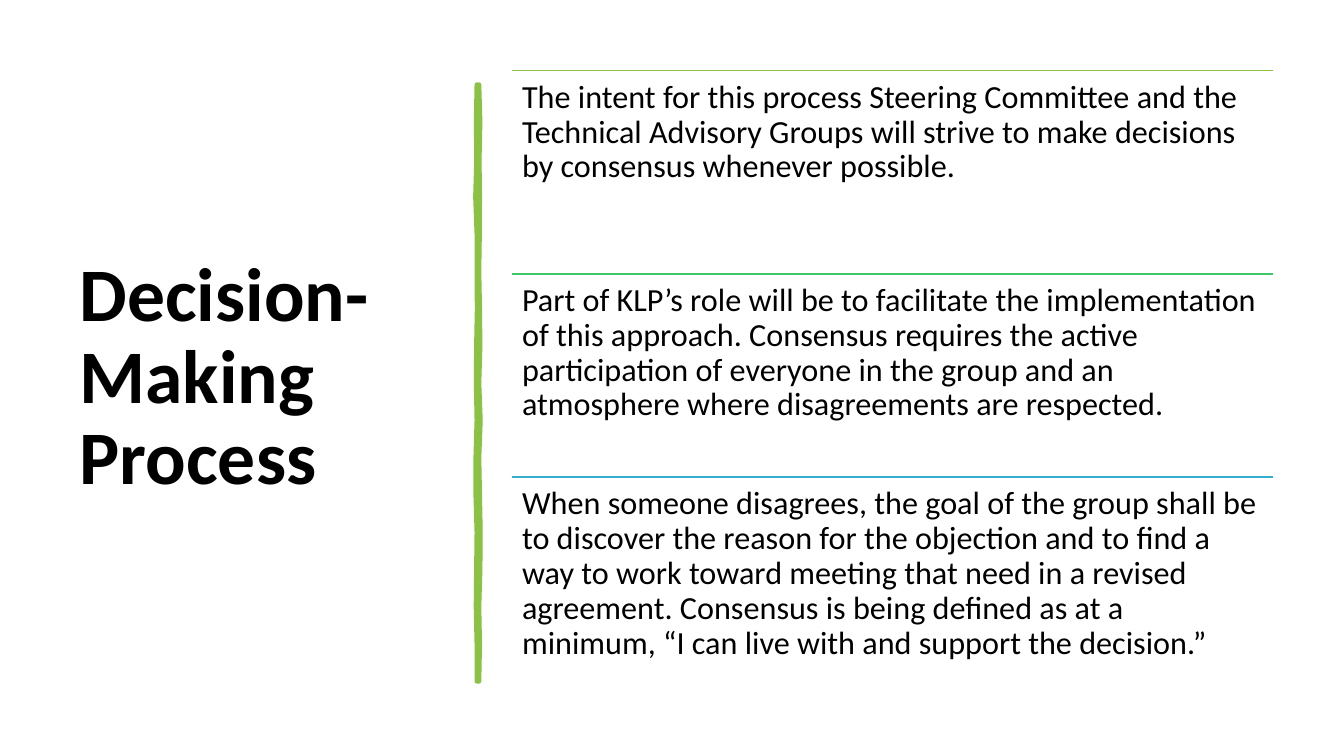
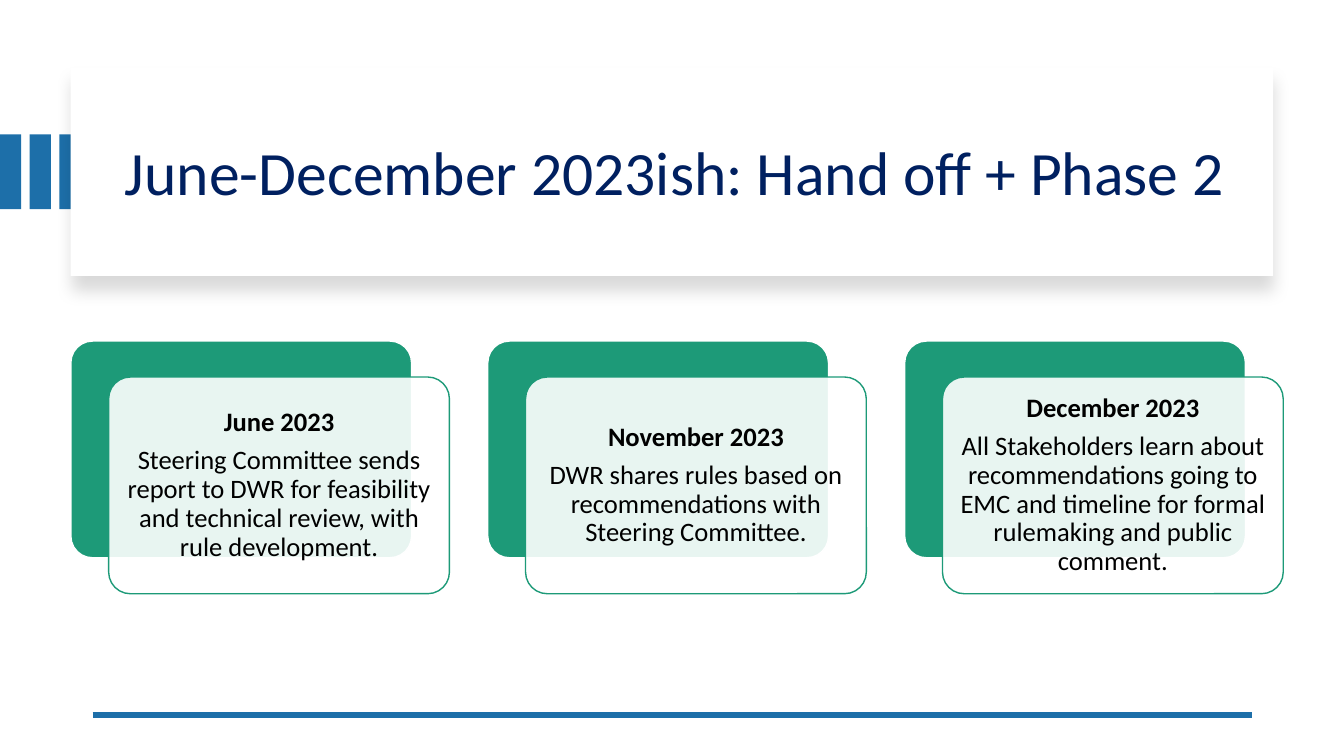
"""Build two slides: a decision-making process and a dated hand-off plan."""
from dataclasses import dataclass

from lxml import etree
from pptx import Presentation
from pptx.dml.color import RGBColor
from pptx.enum.shapes import MSO_CONNECTOR, MSO_SHAPE
from pptx.enum.text import MSO_ANCHOR, MSO_AUTO_SIZE, PP_ALIGN
from pptx.oxml.ns import qn
from pptx.util import Pt

RECT, ROUNDED = MSO_SHAPE.RECTANGLE, MSO_SHAPE.ROUNDED_RECTANGLE
STRAIGHT = MSO_CONNECTOR.STRAIGHT
TOP, MIDDLE = MSO_ANCHOR.TOP, MSO_ANCHOR.MIDDLE
LEFT, CENTER = PP_ALIGN.LEFT, PP_ALIGN.CENTER
TITLE_ONLY = 5

PROCESS_TITLE = "Decision-Making Process"
PRINCIPLES = [
    ("8BC145", "The intent for this process Steering Committee and the Technical "
               "Advisory Groups will strive to make decisions by consensus "
               "whenever possible."),
    ("3EC76A", "Part of KLP’s role will be to facilitate the implementation of "
               "this approach. Consensus requires the active participation of "
               "everyone in the group and an atmosphere where disagreements "
               "are respected."),
    ("36AFCE", "When someone disagrees, the goal of the group shall be to "
               "discover the reason for the objection and to find a way to work "
               "toward meeting that need in a revised agreement. Consensus is "
               "being defined as at a minimum, “I can live with and support "
               "the decision.”"),
]
PLAN_TITLE = "June-December 2023ish: Hand off + Phase 2"
MILESTONES = [
    ("June 2023", "Steering Committee sends report to DWR for feasibility and "
                  "technical review, with rule development."),
    ("November 2023", "DWR shares rules based on recommendations with Steering "
                      "Committee."),
    ("December 2023", "All Stakeholders learn about recommendations going to EMC "
                      "and timeline for formal rulemaking and public comment."),
]
STROKE_LEFT = [0, -0.5, -0.2, -1, 0, 0, 0.2, -0.3, -0.5, 0, -0.8, -0.8, 0, -0.3, -0.6, 0, 0]
STROKE_RIGHT = [0, 0.8, 0.2, 0.5, 0.4, 0, 0.5, 0.8, 0, 1, 0, 0.5, 1, 0.8, 0, 0.5, 0]


@dataclass(frozen=True)
class Theme:
    """Colours, font and type sizes."""
    font: str = "Calibri"
    black: str = "000000"
    white: str = "FFFFFF"
    navy: str = "002060"
    blue: str = "1D6FA9"
    green: str = "8BC145"
    teal: str = "1D9A78"
    process_title: float = 54
    plan_title: float = 44
    body: float = 23
    card: float = 19


THEME = Theme()


def rgb(color):
    """Turn a hex string into a colour."""
    return RGBColor.from_string(color)


def add_child(parent, tag, **attrs):
    """Append a DrawingML element."""
    return etree.SubElement(parent, qn(tag), {k: str(v) for k, v in attrs.items()})


def write_text(sp, *lines, size, color=THEME.black, bold_first=False, align=LEFT,
               anchor=TOP, inset=(7.2, 7.2), after=0):
    """Fill a shape with formatted paragraphs."""
    tf = sp.text_frame
    tf.word_wrap, tf.auto_size, tf.vertical_anchor = True, MSO_AUTO_SIZE.NONE, anchor
    tf.margin_left = tf.margin_right = Pt(inset[0])
    tf.margin_top = tf.margin_bottom = Pt(inset[1])
    for i, line in enumerate(lines):
        p = tf.paragraphs[0] if i == 0 else tf.add_paragraph()
        p.alignment, p.line_spacing = align, 0.9
        p.space_before, p.space_after = Pt(0), Pt(after)
        r = p.add_run()
        r.text = line
        r.font.name, r.font.size = THEME.font, Pt(size)
        r.font.bold = bold_first and i == 0
        r.font.color.rgb = rgb(color)


def set_title(s, text, box, **fmt):
    """Place the title placeholder on top and write it."""
    sp = s.shapes.title
    sp.left, sp.top, sp.width, sp.height = map(Pt, box)
    s.shapes._spTree.append(sp._element)
    write_text(sp, text, anchor=MIDDLE, inset=(7.2, 3.6), **fmt)


def paint(sp, fill, line=None, width=1):
    """Set a plain fill and outline without a shadow."""
    sp.shadow.inherit = False
    sp.fill.solid()
    sp.fill.fore_color.rgb = rgb(fill)
    if line:
        sp.line.color.rgb = rgb(line)
        sp.line.width = Pt(width)
    else:
        sp.line.fill.background()


def add_box(s, kind, box, fill, line=None):
    """Add a painted preset shape."""
    sp = s.shapes.add_shape(kind, *map(Pt, box))
    paint(sp, fill, line)
    if kind == ROUNDED:
        sp.adjustments[0] = 0.1
    return sp


def add_rule(s, left, right, y, color, width):
    """Add a horizontal line."""
    c = s.shapes.add_connector(STRAIGHT, Pt(left), Pt(y), Pt(right), Pt(y))
    c.line.color.rgb = rgb(color)
    c.line.width = Pt(width)
    add_child(c._element.spPr, "a:effectLst")


def add_brush_stroke(s, left, right, top, bottom):
    """Draw the uneven vertical divider."""
    step = (bottom - top) / (len(STROKE_LEFT) - 1)
    down = [(right + dx, top + i * step) for i, dx in enumerate(STROKE_RIGHT)]
    up = [(left + dx, top + i * step) for i, dx in enumerate(STROKE_LEFT)][::-1]
    points = [(Pt(x), Pt(y)) for x, y in down + up]
    fb = s.shapes.build_freeform(*points[0])
    fb.add_line_segments(points[1:], close=True)
    sp = fb.convert_to_shape()
    paint(sp, THEME.green, THEME.green, 3.25)
    add_child(sp.line._get_or_add_ln(), "a:round")


def add_soft_shadow(sp):
    """Cast a faint shadow below a shape."""
    effects = sp._element.spPr.find(qn("a:effectLst"))
    shadow = add_child(effects, "a:outerShdw", blurRad=Pt(11), dist=Pt(10),
                       dir=5400000, algn="t", rotWithShape=0)
    color = add_child(shadow, "a:srgbClr", val=THEME.black)
    add_child(color, "a:alpha", val=15000)


def build_process(s):
    """Lay out the principles beside the title."""
    set_title(s, PROCESS_TITLE, (49.7, 50.4, 269.3, 440), size=THEME.process_title,
              bold_first=True)
    add_brush_stroke(s, 340.6, 342.2, 60.5, 486.7)
    left, top, width, height = 365.8, 50.4, 543.6, 145.2
    for i, (color, text) in enumerate(PRINCIPLES):
        y = top + i * height
        add_rule(s, left, left + width, y, color, 1)
        tb = s.shapes.add_textbox(Pt(left), Pt(y), Pt(width), Pt(height))
        write_text(tb, text, size=THEME.body, after=8)


def build_plan(s):
    """Lay out the title panel and the milestone cards."""
    for i in range(3):
        add_box(s, RECT, (i * 21.2, 96, 15.2, 53.4), THEME.blue)
    panel = add_box(s, RECT, (50.4, 48.2, 859, 149), THEME.white)
    add_soft_shadow(panel)
    set_title(s, PLAN_TITLE, (82, 64, 801.4, 122.4), size=THEME.plan_title,
              color=THEME.navy)
    add_rule(s, 66.2, 894.2, 510.5, THEME.blue, 4.5)
    left, top, width, height, pitch = 50.6, 243.6, 243.4, 154.8, 297.8
    for i, milestone in enumerate(MILESTONES):
        x = left + i * pitch
        add_box(s, ROUNDED, (x, top, width, height), THEME.teal, THEME.white)
        card = add_box(s, ROUNDED, (x + 27, top + 25.7, width, height),
                       THEME.white, THEME.teal)
        fill = card._element.spPr.find(qn("a:solidFill"))
        add_child(fill[0], "a:alpha", val=90000)
        write_text(card, *milestone, size=THEME.card, bold_first=True, align=CENTER,
                   anchor=MIDDLE, inset=(5.8, 5.8), after=6.65)


def main():
    """Build and save the presentation."""
    prs = Presentation()
    prs.slide_width, prs.slide_height = Pt(960), Pt(540)
    for build in (build_process, build_plan):
        build(prs.slides.add_slide(prs.slide_layouts[TITLE_ONLY]))
    prs.save("out.pptx")


if __name__ == "__main__":
    main()
